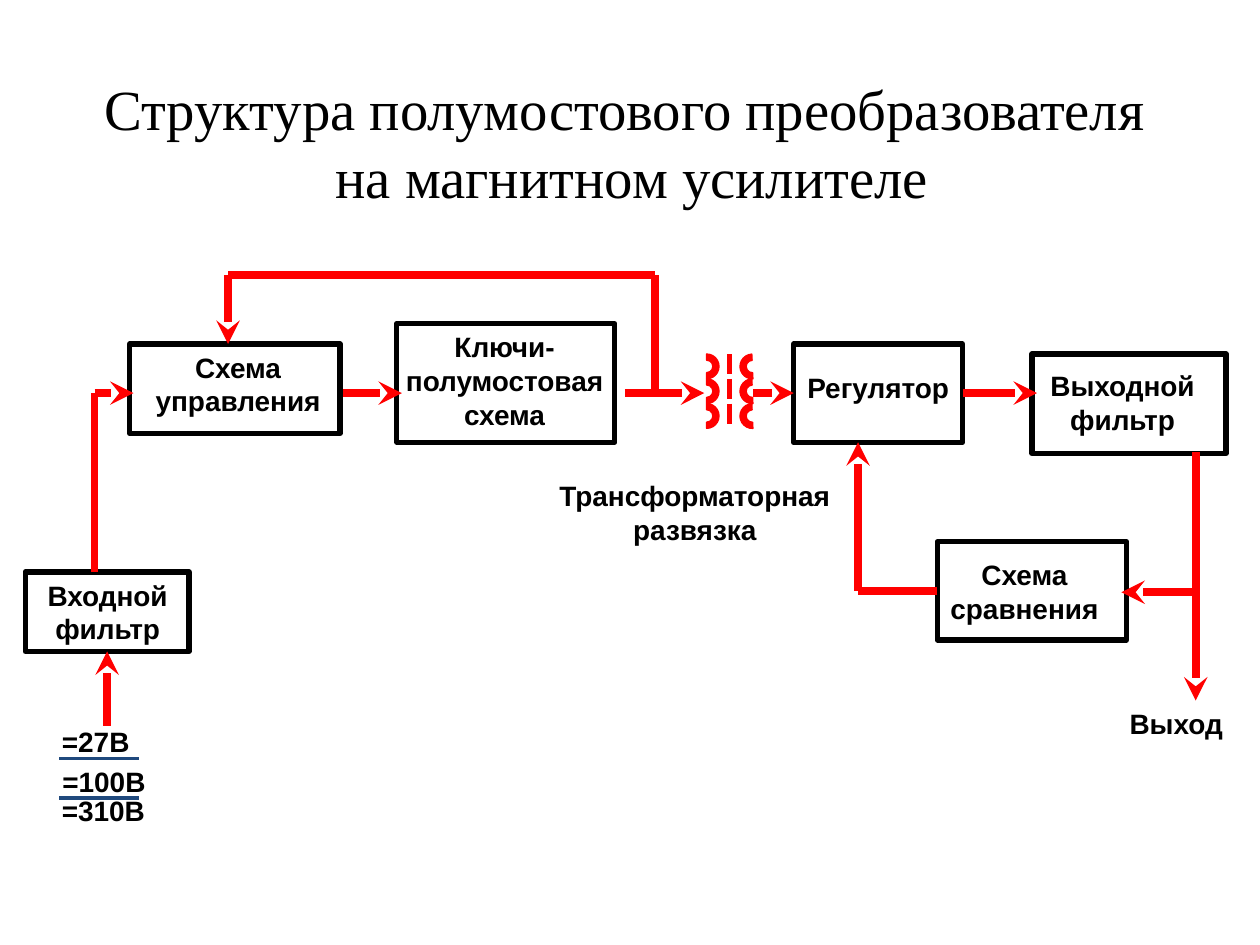
from lxml import etree
from pptx import Presentation
from pptx.dml.color import RGBColor
from pptx.enum.shapes import MSO_CONNECTOR, MSO_SHAPE
from pptx.enum.text import MSO_ANCHOR, PP_ALIGN
from pptx.oxml.ns import qn
from pptx.util import Inches, Pt

RECT, ARC = MSO_SHAPE.RECTANGLE, MSO_SHAPE.BLOCK_ARC
STRAIGHT = MSO_CONNECTOR.STRAIGHT
CENTER, MIDDLE, TOP = PP_ALIGN.CENTER, MSO_ANCHOR.MIDDLE, MSO_ANCHOR.TOP
BOTTOM_SIDE, LEFT_SIDE, RIGHT_SIDE = 2, 1, 3
COLORS = {"text": "000000", "border": "000000", "signal": "FF0000", "rule": "1F497D"}


def rgb(name):
    """Return a named colour."""
    return RGBColor.from_string(COLORS[name])


def add_text(s, box, lines, size=16, font="Arial", bold=True, anchor=TOP, wrap=False):
    """Add a centred text box with one paragraph; lines are split by breaks."""
    sp = s.shapes.add_textbox(*map(Inches, box))
    tf = sp.text_frame
    tf.word_wrap = wrap
    tf.vertical_anchor = anchor
    p = tf.paragraphs[0]
    p.alignment = CENTER
    for i, line in enumerate(lines):
        if i:
            p.add_line_break()
        r = p.add_run()
        r.text = line
        r.font.size, r.font.name, r.font.bold = Pt(size), font, bold
        r.font.color.rgb = rgb("text")


def add_line(s, start, end, color="signal", width=4.5, arrow=False, source=None, target=None):
    """Add a straight line, optionally with an arrowhead and joined ends."""
    sp = s.shapes.add_connector(STRAIGHT, *map(Inches, (*start, *end)))
    sp.line.color.rgb = rgb(color)
    sp.line.width = Pt(width)
    if arrow:
        etree.SubElement(sp.line._get_or_add_ln(), qn("a:tailEnd"), type="stealth")
    etree.SubElement(sp._element.spPr, qn("a:effectLst"))
    if source:
        sp.begin_connect(*source)
    if target:
        sp.end_connect(*target)


def add_route(s, points, arrow=True, source=None, target=None):
    """Add a signal route through points, with the arrowhead on its last leg."""
    last = len(points) - 2
    for i, (start, end) in enumerate(zip(points, points[1:])):
        add_line(s, start, end, arrow=arrow and i == last,
                 source=source if i == 0 else None, target=target if i == last else None)


def add_block(s, box, label_box, lines):
    """Add an outlined block with its label and return the outline."""
    add_text(s, label_box, lines)
    sp = s.shapes.add_shape(RECT, *map(Inches, box))
    sp.shadow.inherit = False
    sp.fill.background()
    sp.line.color.rgb = rgb("border")
    sp.line.width = Pt(3)
    return sp


def add_transformer(s, box):
    """Add two facing windings of three turns with a dashed core between them."""
    x, y, w, h = box
    turn = h / 3
    for i in range(3):
        top = y + i * turn
        core = x + w / 2
        add_line(s, (core, top), (core, top + 0.16), width=3)
        for left, rotation in ((x, 90), (x + w - turn, 267.5)):
            sp = s.shapes.add_shape(ARC, *map(Inches, (left, top, turn, turn)))
            sp.rotation = rotation
            sp.shadow.inherit = False
            sp.fill.solid()
            sp.fill.fore_color.rgb = rgb("signal")
            sp.line.color.rgb = rgb("signal")
            sp.line.width = Pt(0.75)


def add_inputs(s, box):
    """Add the input voltages and the rules between them."""
    x, y, w, h = box
    voltages = ((0, 0.74, "=27В"), (0.32, 0.87, "=100В"), (0.55, 0.86, "=310В"))
    for dy, width, voltage in voltages:
        add_text(s, (x, y + dy, width, 0.37), [voltage])
    for dy in (0.32, 0.63):
        add_line(s, (x + 0.08, y + dy), (x + 0.71, y + dy), "rule", 2.25)


def add_diagram(s):
    """Add the blocks of the converter and the signal routes between them."""
    regulator = add_block(s, (6.3, 2.73, 1.34, 0.78), (6.3, 2.89, 1.34, 0.37), ["Регулятор"])
    add_block(s, (8.19, 2.81, 1.54, 0.79), (8.23, 2.88, 1.36, 0.64), ["Выходной", "фильтр"])
    comparator = add_block(s, (7.44, 4.3, 1.5, 0.78), (7.44, 4.38, 1.38, 0.64),
                           ["Схема", "сравнения"])
    input_filter = add_block(s, (0.2, 4.54, 1.3, 0.63), (0.27, 4.54, 1.17, 0.64),
                             ["Входной", "фильтр"])
    add_block(s, (1.03, 2.73, 1.67, 0.71), (0.59, 2.73, 2.6, 0.64), ["Схема", "управления"])
    add_block(s, (3.15, 2.57, 1.73, 0.94), (3.11, 2.57, 1.79, 0.9),
              ["Ключи-", "полумостовая", "схема"])
    add_text(s, (4.33, 3.75, 2.37, 0.64), ["Трансформаторная", "развязка"], wrap=True)
    add_text(s, (8.86, 5.56, 0.95, 0.37), ["Выход"])
    add_transformer(s, (5.51, 2.81, 0.56, 0.59))

    axis = 3.12
    add_route(s, [(0.85, 5.76), (0.85, 5.17)], target=(input_filter, BOTTOM_SIDE))
    add_route(s, [(0.75, 4.54), (0.75, axis), (1.06, axis)])
    add_route(s, [(2.72, axis), (3.19, axis)])
    add_route(s, [(4.96, axis), (5.59, axis)])
    add_route(s, [(5.2, axis), (5.2, 2.18), (1.81, 2.18), (1.81, 2.73)])
    add_route(s, [(5.98, axis), (6.3, axis)], target=(regulator, LEFT_SIDE))
    add_route(s, [(7.64, axis), (8.23, axis)], source=(regulator, RIGHT_SIDE))
    add_route(s, [(9.49, 3.59), (9.49, 5.56)])
    add_route(s, [(9.49, 4.7), (8.9, 4.7)])
    add_route(s, [(7.44, 4.69), (6.81, 4.69), (6.81, 3.51)], source=(comparator, LEFT_SIDE))


def main():
    """Build and save the slide."""
    prs = Presentation()
    prs.slide_width, prs.slide_height = Inches(10), Inches(7.5)
    s = prs.slides.add_slide(prs.slide_layouts[6])
    add_text(s, (0.5, 0.3, 9.03, 1.65),
             ["Структура полумостового преобразователя ", "на магнитном усилителе"],
             size=32.4, font="Times New Roman", bold=False, anchor=MIDDLE, wrap=True)
    add_diagram(s)
    add_inputs(s, (0.39, 5.7, 0.87, 0.92))
    prs.save("out.pptx")


if __name__ == "__main__":
    main()
